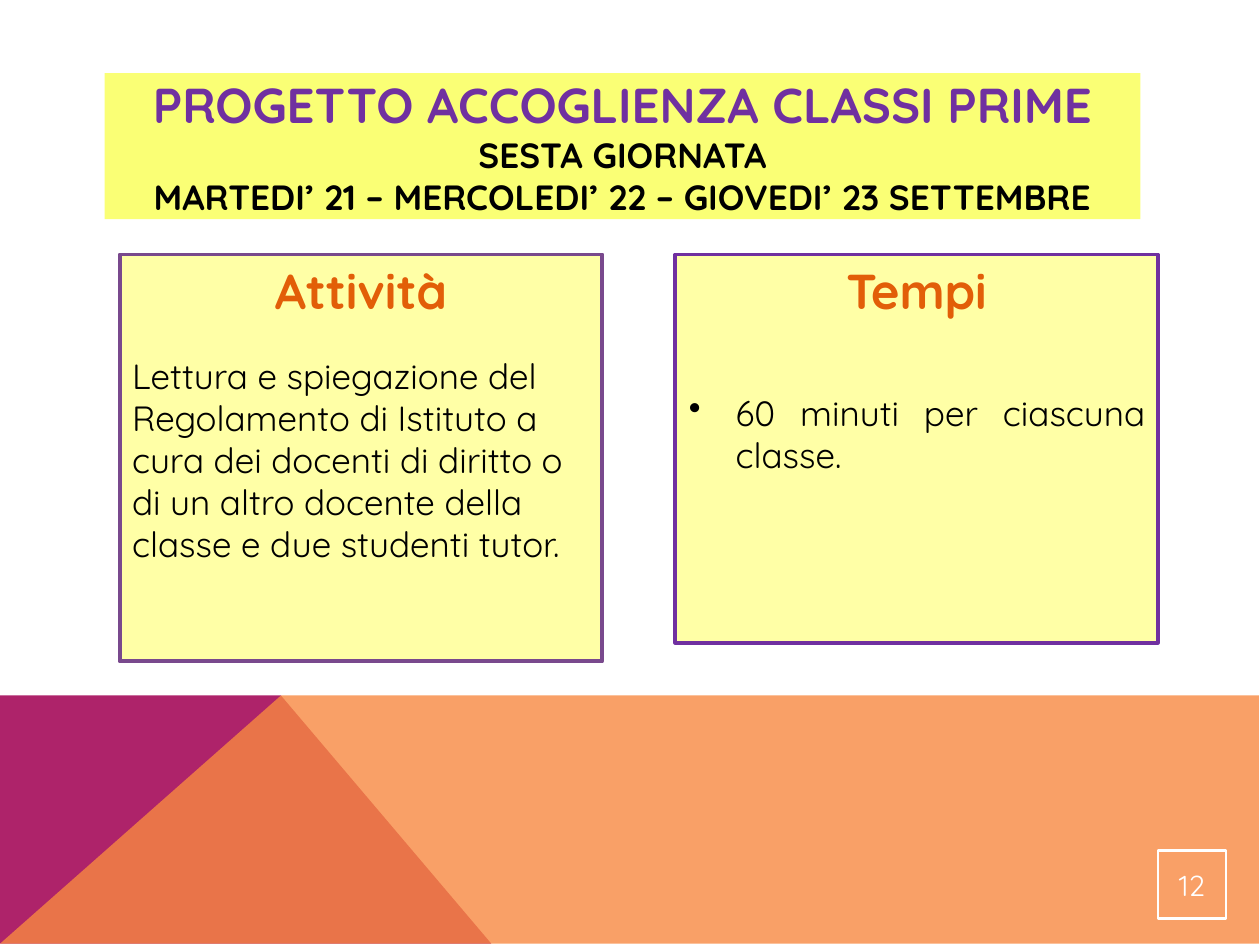
from dataclasses import dataclass
from typing import Any, Optional

import lxml.etree
import pptx
import pptx.dml.color
import pptx.enum.shapes
import pptx.enum.text
import pptx.oxml.ns
import pptx.util

EMU_PER_PX = 9144
ALIGN = pptx.enum.text.PP_ALIGN
ANCHOR = pptx.enum.text.MSO_ANCHOR


@dataclass(frozen=True)
class Theme:
    font: str = "Quicksand"
    heading_size: float = 28
    body_size: float = 20
    number_size: float = 16.5
    purple: str = "7030A0"
    plum: str = "79498D"
    orange: str = "E25E08"
    black: str = "000000"
    white: str = "FFFFFF"
    banner: str = "FAFF75"
    panel: str = "FFFFA6"
    magenta: str = "AE236A"
    apricot: str = "F88941"


THEME = Theme()


@dataclass(frozen=True)
class Box:
    left: int
    top: int
    width: int
    height: int
    fill: Optional[str] = None
    line: Optional[str] = None
    line_width: float = 2.25
    anchor: Any = ANCHOR.TOP
    inset_x: int = 10
    inset_y: int = 5


@dataclass(frozen=True)
class Panel:
    box: Box
    heading: str
    body: str
    gap: int
    align: Any
    bullet: bool = False


@dataclass(frozen=True)
class Band:
    points: tuple[tuple[int, int], ...]
    color: str
    opacity: int = 100


BANDS = (
    Band(((0, 749), (0, 552), (223, 552), (390, 749)), THEME.magenta),
    Band(((0, 749), (223, 552), (999, 552), (999, 749)), THEME.apricot, 80),
)
BANNER = Box(83, 58, 822, 116, THEME.banner, anchor=ANCHOR.MIDDLE)
NUMBER = Box(919, 675, 54, 54, None, THEME.white, 1.5, ANCHOR.MIDDLE, 1, 1)
PANELS = (
    Panel(
        Box(95, 202, 383, 323, THEME.panel, THEME.plum),
        "Attività",
        "Lettura e spiegazione del Regolamento di Istituto a cura dei docenti "
        "di diritto o di un altro docente della classe e due studenti tutor.",
        20,
        ALIGN.LEFT,
    ),
    Panel(
        Box(536, 202, 383, 308, THEME.panel, THEME.purple),
        "Tempi",
        "60 minuti per ciascuna classe.",
        41,
        ALIGN.JUSTIFY,
        True,
    ),
)


def px(length: int) -> int:
    return pptx.util.Emu(length * EMU_PER_PX)


def rgb(color: str) -> pptx.dml.color.RGBColor:
    return pptx.dml.color.RGBColor.from_string(color)


def apply(target: Any, values: dict[str, Any]) -> None:
    for name, value in values.items():
        setattr(target, name, value)


def paint(shape: Any, fill: Optional[str], line: Optional[str], width: float = 0) -> None:
    for part, color in ((shape.fill, fill), (shape.line.fill, line)):
        if color is None:
            part.background()
        else:
            part.solid()
            part.fore_color.rgb = rgb(color)
    if line is not None:
        shape.line.width = pptx.util.Pt(width)


def format_box(shape: Any, box: Box) -> None:
    apply(shape, {name: px(getattr(box, name)) for name in ("left", "top", "width", "height")})
    paint(shape, box.fill, box.line, box.line_width)
    apply(shape.text_frame, {
        "word_wrap": True,
        "auto_size": pptx.enum.text.MSO_AUTO_SIZE.NONE,
        "vertical_anchor": box.anchor,
        "margin_left": px(box.inset_x),
        "margin_right": px(box.inset_x),
        "margin_top": px(box.inset_y),
        "margin_bottom": px(box.inset_y),
    })


def add_box(page: Any, box: Box) -> Any:
    shape = page.shapes.add_shape(pptx.enum.shapes.MSO_SHAPE.RECTANGLE, 0, 0, 0, 0)
    shape.shadow.inherit = False
    format_box(shape, box)
    return shape


def add_span(para: Any, text: str, size: float, color: str, bold: bool = False) -> None:
    span = para.add_run()
    span.text = text
    apply(span.font, {"name": THEME.font, "size": pptx.util.Pt(size), "bold": bold})
    span.font.color.rgb = rgb(color)


def add_bullet(para: Any) -> None:
    properties = para._p.get_or_add_pPr()
    properties.set("marL", str(px(38)))
    properties.set("indent", str(px(-37)))
    bullet = lxml.etree.SubElement(properties, pptx.oxml.ns.qn("a:buChar"))
    bullet.set("char", "•")


def draw_band(page: Any, band: Band) -> None:
    builder = page.shapes.build_freeform(*band.points[0], scale=EMU_PER_PX)
    builder.add_line_segments(band.points[1:], close=True)
    shape = builder.convert_to_shape()
    shape.shadow.inherit = False
    paint(shape, band.color, None)
    if band.opacity < 100:
        color = shape._element.spPr.find(".//" + pptx.oxml.ns.qn("a:srgbClr"))
        alpha = lxml.etree.SubElement(color, pptx.oxml.ns.qn("a:alpha"))
        alpha.set("val", str(band.opacity * 1000))


def draw_banner(page: Any) -> None:
    title = page.shapes.title
    format_box(title, BANNER)
    para = title.text_frame.paragraphs[0]
    apply(para, {"alignment": ALIGN.CENTER, "line_spacing": 1.0})
    add_span(para, "PROGETTO ACCOGLIENZA CLASSI PRIME", THEME.heading_size, THEME.purple, True)
    add_span(para, " SESTA GIORNATA", THEME.body_size, THEME.black, True)
    para.add_line_break()
    add_span(para, "MARTEDI’ 21 – MERCOLEDI’ 22 – GIOVEDI’ 23 SETTEMBRE",
             THEME.body_size, THEME.black, True)


def draw_panel(page: Any, panel: Panel) -> None:
    frame = add_box(page, panel.box).text_frame
    heading = frame.paragraphs[0]
    heading.alignment = ALIGN.CENTER
    add_span(heading, panel.heading, THEME.heading_size, THEME.orange, True)
    body = frame.add_paragraph()
    apply(body, {"alignment": panel.align, "space_before": pptx.util.Pt(panel.gap)})
    add_span(body, panel.body, THEME.body_size, THEME.black)
    if panel.bullet:
        add_bullet(body)


def draw_number(page: Any) -> None:
    para = add_box(page, NUMBER).text_frame.paragraphs[0]
    para.alignment = ALIGN.CENTER
    add_span(para, "12", THEME.number_size, THEME.white)


def main() -> None:
    deck = pptx.Presentation()
    apply(deck, {"slide_width": px(1000), "slide_height": px(750)})
    page = deck.slides.add_slide(deck.slide_layouts.get_by_name("Title Only"))
    for band in BANDS:
        draw_band(page, band)
    draw_banner(page)
    for panel in PANELS:
        draw_panel(page, panel)
    draw_number(page)
    deck.save("out.pptx")


if __name__ == "__main__":
    main()
